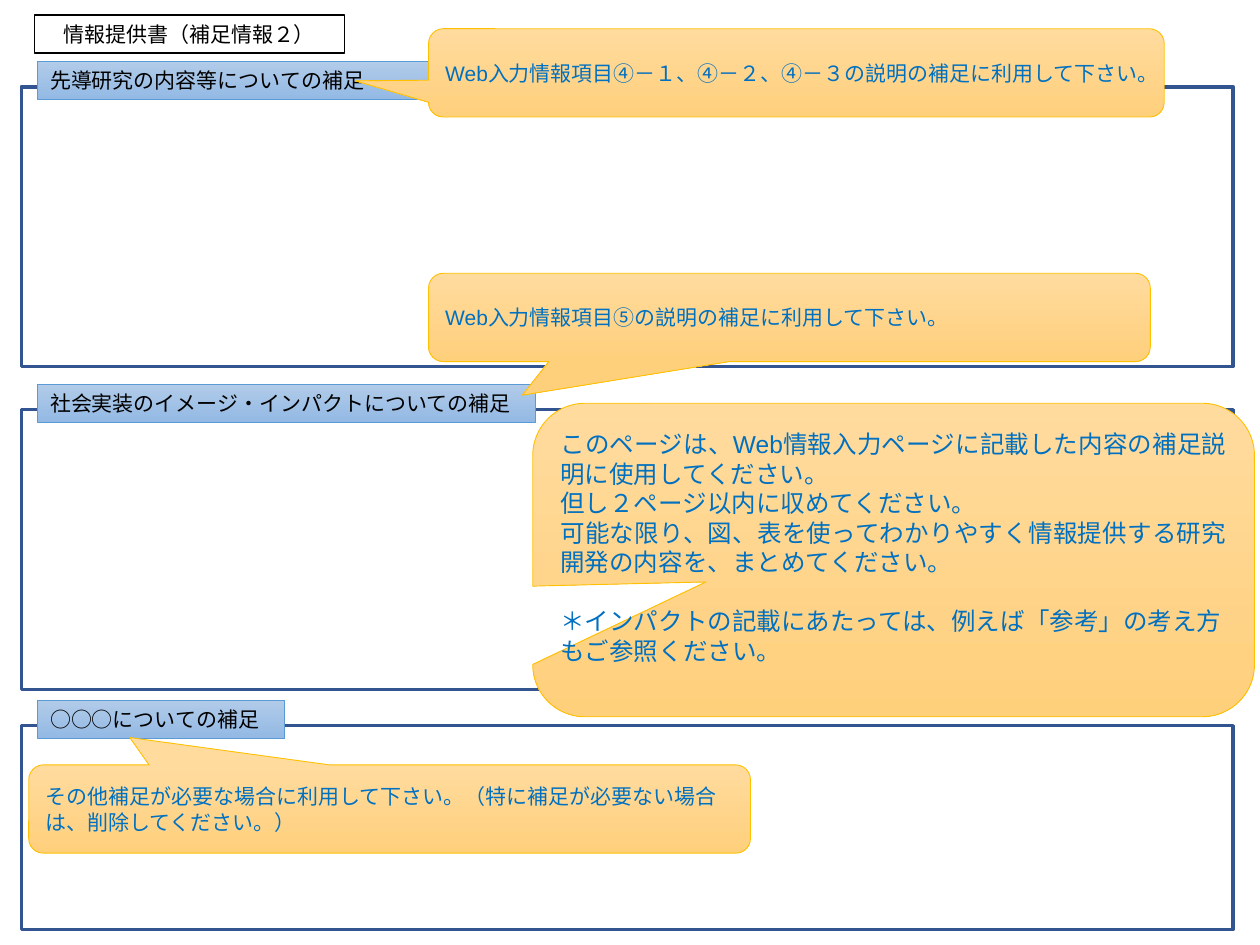
"""Build the supplementary information form with its guidance callouts."""
from pptx import Presentation
from pptx.dml.color import RGBColor
from pptx.enum.shapes import MSO_SHAPE
from pptx.enum.text import MSO_ANCHOR, MSO_AUTO_SIZE, PP_ALIGN
from pptx.util import Cm, Pt

BLACK = RGBColor(0x00, 0x00, 0x00)
FRAME_BLUE = RGBColor(0x32, 0x54, 0x91)
LABEL_LINE = RGBColor(0x5B, 0x9B, 0xD5)
LABEL_TOP = RGBColor(0xB1, 0xCB, 0xE9)
LABEL_BOTTOM = RGBColor(0x93, 0xB9, 0xE4)
CALLOUT_LINE = RGBColor(0xFF, 0xC0, 0x00)
CALLOUT_TOP = RGBColor(0xFF, 0xDB, 0x9E)
CALLOUT_BOTTOM = RGBColor(0xFF, 0xD0, 0x7C)
GUIDE_BLUE = RGBColor(0x00, 0x70, 0xC0)

SECTIONS = [
    ("先導研究の内容等についての補足", 1.75, 5.64, 8.71),
    ("社会実装のイメージ・インパクトについての補足", 8.26, 5.64, 10.03),
    ("○○○についての補足", 14.63, 4.11, 4.98),
]
GENERAL_GUIDE = [
    "このページは、Web情報入力ページに記載した内容の補足説明に使用してください。",
    "但し２ページ以内に収めてください。",
    "可能な限り、図、表を使ってわかりやすく情報提供する研究開発の内容を、まとめてください。",
    "＊インパクトの記載にあたっては、例えば「参考」の考え方もご参照ください。",
]
ITEM_GUIDES = [
    ("Web入力情報項目④－１、④－２、④－３の説明の補足に利用して下さい。",
     (8.64, 0.58, 14.83, 1.78), (-0.6, 0.09)),
    ("Web入力情報項目⑤の説明の補足に利用して下さい。",
     (8.64, 5.51, 14.55, 1.78), (-0.37, 0.88)),
    ("その他補足が必要な場合に利用して下さい。（特に補足が必要ない場合は、削除してください。）",
     (0.58, 15.42, 14.55, 1.78), (-0.36, -0.81)),
]


def write_text(shape, lines, *, size=12, font="Calibri", color=BLACK, align=PP_ALIGN.LEFT):
    """Write one paragraph per line in the given format."""
    frame = shape.text_frame
    frame.word_wrap = True
    frame.auto_size = MSO_AUTO_SIZE.NONE
    frame.vertical_anchor = MSO_ANCHOR.MIDDLE
    frame.text = "\n".join(lines)
    for paragraph in frame.paragraphs:
        paragraph.alignment = align
        paragraph.font.size = Pt(size)
        paragraph.font.name = font
        paragraph.font.color.rgb = color
    return frame


class FormSlide:
    """Hold the form's style and the slide being filled."""

    def __init__(self, presentation):
        self.slide = presentation.slides.add_slide(presentation.slide_layouts[5])

    def add_title(self, text, left, top, width, height):
        """Place the outlined title."""
        title = self.slide.shapes.title
        title.left, title.top, title.width, title.height = map(Cm, (left, top, width, height))
        title.line.color.rgb = BLACK
        title.line.width = Pt(0.75)
        write_text(title, [text], align=PP_ALIGN.CENTER)

    def add_box(self, kind, box, line_color, line_width, gradient=None):
        """Add an outlined shape with an optional vertical gradient."""
        shape = self.slide.shapes.add_shape(kind, *map(Cm, box))
        shape.shadow.inherit = False
        shape.line.color.rgb = line_color
        shape.line.width = Pt(line_width)
        if gradient:
            shape.fill.gradient()
            shape.fill.gradient_angle = 270
            for stop, color in zip(shape.fill.gradient_stops, gradient):
                stop.color.rgb = color
        else:
            shape.fill.background()
        return shape

    def add_section(self, text, top, height, label_width):
        """Add a section frame and the label across its top edge."""
        self.add_box(MSO_SHAPE.RECTANGLE, (0.43, top, 24.43, height), FRAME_BLUE, 2)
        label = self.add_box(MSO_SHAPE.RECTANGLE, (0.76, top - 0.51, label_width, 0.77),
                             LABEL_LINE, 0.5, (LABEL_TOP, LABEL_BOTTOM))
        write_text(label, [text])

    def add_callout(self, lines, box, pointer, **text_format):
        """Add a guidance callout and return its text frame."""
        callout = self.add_box(MSO_SHAPE.ROUNDED_RECTANGULAR_CALLOUT, box,
                               CALLOUT_LINE, 0.5, (CALLOUT_TOP, CALLOUT_BOTTOM))
        callout.adjustments[0], callout.adjustments[1] = pointer
        return write_text(callout, lines, font="Arial", color=GUIDE_BLUE, **text_format)


def main():
    """Build and save the form."""
    presentation = Presentation()
    presentation.slide_width, presentation.slide_height = Cm(25.4), Cm(19.05)
    form = FormSlide(presentation)
    form.add_title("情報提供書（補足情報２）", 0.69, 0.3, 6.25, 0.77)
    for section in SECTIONS:
        form.add_section(*section)
    general = form.add_callout(GENERAL_GUIDE, (10.74, 8.13, 14.55, 6.32), (-0.26, 0.07),
                               size=14, align=PP_ALIGN.JUSTIFY)
    general.margin_bottom = Cm(0.64)
    general.paragraphs[-1].space_before = Pt(17)
    general.paragraphs[-1].alignment = PP_ALIGN.LEFT
    for text, box, pointer in ITEM_GUIDES:
        form.add_callout([text], box, pointer)
    presentation.save("out.pptx")


if __name__ == "__main__":
    main()
